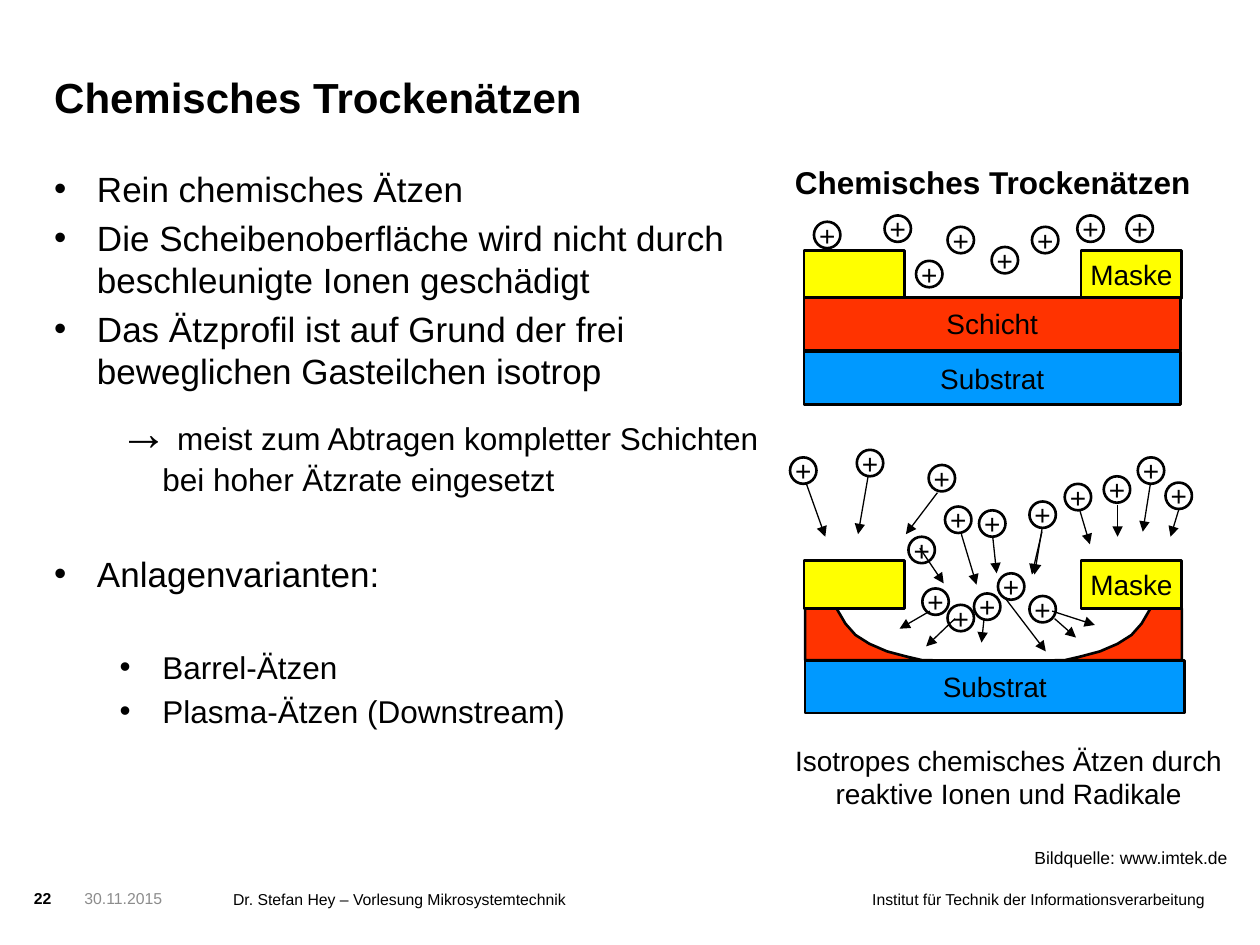
from pptx import Presentation
from pptx.dml.color import RGBColor
from pptx.enum.shapes import MSO_CONNECTOR as Link, MSO_SHAPE as Form
from pptx.enum.text import MSO_ANCHOR as Anchor, MSO_AUTO_SIZE as Fit, PP_ALIGN as Align
from pptx.oxml.ns import qn
from pptx.util import Inches, Pt
from lxml.etree import SubElement as Sub

# Grid: 1000 columns by 750 rows, one unit is a thousandth of the slide width
COLS, ROWS = 1000, 750
UNIT = Inches(10) // COLS
INK, GREY = "000000", "8C8C8C"
YELLOW, RED, BLUE = "FFFF00", "FF3300", "0099FF"
WIDE, MASK, HIGH, ION = 299, 80, 42, 21

# Ions (left, top), arrows (from, to) and the etched edge, relative to a panel
GAS = [(8, -23), (64, -28), (89, 8), (149, -3), (181, -19), (217, -28),
       (256, -28), (114, -19)]
ETCH = [(-11, -82), (42, -88), (99, -76), (112, -43), (139, -40), (179, -47),
        (207, -61), (238, -67), (265, -82), (287, -62), (94, 22), (114, 35),
        (135, 26), (154, 10), (179, 28), (83, -19)]
PATHS = [(2, -61, 17, -19), (51, -67, 43, -21), (106, -54, 81, -21),
         (92, -10, 111, 18), (125, -21, 137, 19), (150, -18, 153, 10),
         (189, -25, 183, 11), (100, 40, 76, 54), (120, 46, 97, 68),
         (143, 46, 141, 65), (160, 30, 192, 72), (199, 46, 216, 61),
         (197, 40, 231, 51), (189, -23, 181, 11), (219, -40, 227, -13),
         (249, -44, 249, -19), (275, -61, 269, -23), (298, -42, 291, -19)]
EDGE = [(1, 38), (26, 38), (33, 50), (41, 59), (52, 66), (66, 72), (81, 76),
        (94, 79), (102, 79), (1, 79)]


def color(code):
    return RGBColor.from_string(code)


def grid(*units):
    return [round(u * UNIT) for u in units]


def write(para, text, size=9, ink=INK, bold=False, align=Align.LEFT, before=0):
    para.alignment = align
    para.space_before = Pt(before)
    run = para.add_run()
    run.text = text
    font = run.font
    font.name, font.size, font.bold = "Arial", Pt(size), bold
    font.color.rgb = color(ink)


def setup(frame, anchor=Anchor.TOP, wrap=True):
    frame.margin_left = frame.margin_right = 0
    frame.margin_top = frame.margin_bottom = 0
    frame.auto_size = Fit.NONE
    frame.vertical_anchor = anchor
    frame.word_wrap = wrap
    return frame.paragraphs[0]


def label(slide, box, lines, **style):
    frame = slide.shapes.add_textbox(*grid(*box)).text_frame
    para = setup(frame)
    for i, line in enumerate(lines.split("\n")):
        write(frame.add_paragraph() if i else para, line, **style)


def paint(shape, fill):
    shape.shadow.inherit = False
    if fill:
        shape.fill.solid()
        shape.fill.fore_color.rgb = color(fill)
    else:
        shape.fill.background()
    shape.line.color.rgb = color(INK)
    shape.line.width = Pt(1.5)


def block(slide, box, fill=None, text="", form=Form.RECTANGLE):
    shape = slide.shapes.add_shape(form, *grid(*box))
    paint(shape, fill)
    para = setup(shape.text_frame, Anchor.MIDDLE, False)
    if text:
        write(para, text, size=16, align=Align.CENTER)


def arrow(slide, ends):
    line = slide.shapes.add_connector(Link.STRAIGHT, *grid(*ends))
    line.line.color.rgb = color(INK)
    line.line.width = Pt(0.75)
    Sub(line.line._get_or_add_ln(), qn("a:tailEnd"), type="triangle")
    Sub(line._element.spPr, qn("a:effectLst"))


def ions(slide, x, y, spots):
    for dx, dy in spots:
        block(slide, (x + dx, y + dy, ION, ION), text="+", form=Form.OVAL)


def masks(slide, x, y):
    block(slide, (x, y, MASK, 38), YELLOW)
    block(slide, (x + WIDE - MASK + 1, y, MASK, 38), YELLOW, "Maske")


def start(slide, x, y):
    """Layers before etching, with gas above."""
    masks(slide, x, y)
    block(slide, (x, y + 37, WIDE, HIGH), RED, "Schicht")
    block(slide, (x, y + 80, WIDE, HIGH), BLUE, "Substrat")
    ions(slide, x, y, GAS)


def etched(slide, x, y):
    """Layers with the isotropic hollow, and moving ions."""
    masks(slide, x, y)
    block(slide, (x + 1, y + 79, WIDE + 2, HIGH), BLUE, "Substrat")
    for edge in (EDGE, [(301 - dx, dy) for dx, dy in EDGE]):
        spots = [grid(x + dx, y + dy) for dx, dy in edge]
        form = slide.shapes.build_freeform(*spots[0])
        form.add_line_segments(spots[1:], close=True)
        paint(form.convert_to_shape(), RED)
    for x1, y1, x2, y2 in PATHS:
        arrow(slide, (x + x1, y + y1, x + x2, y + y2))
    ions(slide, x, y, ETCH)


def title(slide, box, text):
    head = slide.shapes.title
    head.left, head.top, head.width, head.height = grid(*box)
    write(setup(head.text_frame, Anchor.BOTTOM), text, size=24, bold=True)


def bullets(slide, box):
    # Text, left indent in units, size, space before
    items = [
        ("Rein chemisches Ätzen", 34, 20, 0),
        ("Die Scheibenoberfläche wird nicht durch beschleunigte Ionen geschädigt", 34, 20, 4),
        ("Das Ätzprofil ist auf Grund der frei beweglichen Gasteilchen isotrop", 34, 20, 4),
        (" meist zum Abtragen kompletter Schichten bei hoher Ätzrate eingesetzt", 86, 18, 5.6),
        ("Anlagenvarianten:", 34, 20, 31),
        ("Barrel-Ätzen", 86, 18, 30.6),
        ("Plasma-Ätzen (Downstream)", 86, 18, 3.6),
    ]
    frame = slide.shapes.add_textbox(*grid(*box)).text_frame
    first = setup(frame)
    for i, (text, left, size, gap) in enumerate(items):
        para = frame.add_paragraph() if i else first
        props = para._p.get_or_add_pPr()
        props.set("marL", str(left * UNIT))
        props.set("indent", str(-34 * UNIT))
        if text.startswith(" "):
            Sub(props, qn("a:buNone"))
            write(para, "→", size=28, before=gap)
        else:
            Sub(props, qn("a:buFont"), typeface="Arial")
            Sub(props, qn("a:buChar"), char="•")
        write(para, text, size=size, before=gap)


def footer(slide, y):
    label(slide, (27, y, 36, 24), "22", bold=True)
    label(slide, (67, y, 114, 39), "30.11.2015", ink=GREY)
    label(slide, (185, y + 1, 299, 39), "Dr. Stefan Hey – Vorlesung Mikrosystemtechnik")
    label(slide, (657, y + 1, 299, 39),
          "Institut für Technik der Informationsverarbeitung", align=Align.RIGHT)


def main():
    deck = Presentation()
    deck.slide_width, deck.slide_height = grid(COLS, ROWS)
    slide = deck.slides.add_slide(deck.slide_layouts[5])
    title(slide, (43, 36, 756, 61), "Chemisches Trockenätzen")
    bullets(slide, (43, 133, 583, 533))
    # Diagram column
    label(slide, (613, 129, 350, 30), "Chemisches Trockenätzen",
          size=18, bold=True, align=Align.CENTER)
    start(slide, 638, 199)
    etched(slide, 638, 445)
    label(slide, (613, 590, 375, 54),
          "Isotropes chemisches Ätzen durch\nreaktive Ionen und Radikale",
          size=16, align=Align.CENTER)
    label(slide, (807, 672, 181, 20), "Bildquelle: www.imtek.de",
          size=10, align=Align.CENTER)
    footer(slide, 705)
    deck.save("out.pptx")


if __name__ == "__main__":
    main()
